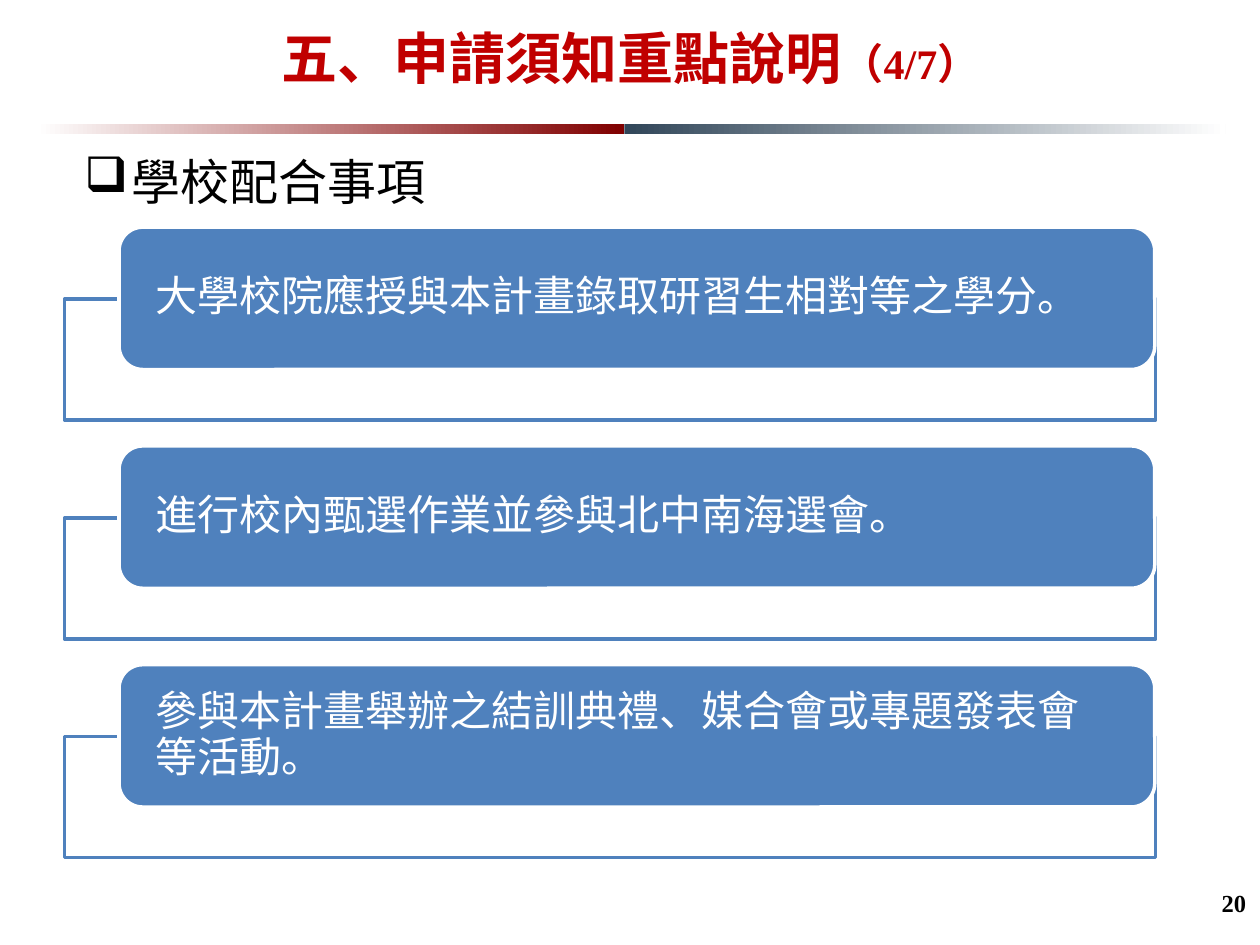
import pptx
import pptx.dml.color
import pptx.enum.shapes
import pptx.enum.text
import pptx.oxml
import pptx.oxml.ns
import pptx.util
from lxml import etree

Cm = pptx.util.Cm
Pt = pptx.util.Pt
RGBColor = pptx.dml.color.RGBColor
SHAPE = pptx.enum.shapes.MSO_SHAPE
ANCHOR = pptx.enum.text.MSO_ANCHOR
ALIGN = pptx.enum.text.PP_ALIGN
qn = pptx.oxml.ns.qn

WHITE = RGBColor(0xFF, 0xFF, 0xFF)
BLACK = RGBColor(0x00, 0x00, 0x00)
RED = RGBColor(0xC0, 0x00, 0x00)
MAROON = RGBColor(0x80, 0x00, 0x00)
SLATE = RGBColor(0x31, 0x46, 0x59)
BLUE = RGBColor(0x4F, 0x81, 0xBD)

SERIF = "Times New Roman"
SANS = "Noto Sans CJK SC"

DUTIES = [
    "大學校院應授與本計畫錄取研習生相對等之學分。",
    "進行校內甄選作業並參與北中南海選會。",
    "參與本計畫舉辦之結訓典禮、媒合會或專題發表會等活動。",
]


def add_run(paragraph, text, size, color, bold=False, latin=SERIF):
    run = paragraph.add_run()
    run.text = text
    run.font.size = Pt(size)
    run.font.bold = bold
    run.font.color.rgb = color
    run.font.name = latin
    east_asian = etree.SubElement(run.font._element, qn("a:ea"))
    east_asian.set("typeface", SANS)


def set_insets(frame, left, top, right, bottom):
    frame.margin_left, frame.margin_top = Cm(left), Cm(top)
    frame.margin_right, frame.margin_bottom = Cm(right), Cm(bottom)


def add_text_area(slide, left, top, width, height):
    area = slide.shapes.add_textbox(Cm(left), Cm(top), Cm(width), Cm(height))
    area.text_frame.word_wrap = True
    return area.text_frame


def add_block(slide, preset, left, top, width, height):
    block = slide.shapes.add_shape(preset, Cm(left), Cm(top), Cm(width), Cm(height))
    block.shadow.inherit = False
    return block


def add_title(slide, left, top, width, height):
    title = add_text_area(slide, left, top, width, height)
    set_insets(title, 0.25, 0.13, 0.25, 0.3)
    title.vertical_anchor = ANCHOR.MIDDLE
    heading = title.paragraphs[0]
    heading.alignment = ALIGN.CENTER
    add_run(heading, "五、申請須知重點說明", 32, RED, True, SANS)
    add_run(heading, "（4/7）", 24, RED, True)


def add_divider(slide, left, top, width, height):
    red_width = width * 0.49 + 0.1
    halves = [
        (left, red_width, WHITE, MAROON),
        (left + red_width, width - red_width, SLATE, WHITE),
    ]
    for half_left, half_width, start, end in halves:
        half = add_block(slide, SHAPE.RECTANGLE, half_left, top, half_width, height)
        half.line.fill.background()
        half.fill.gradient()
        half.fill.gradient_angle = 0
        for stop, color in zip(half.fill.gradient_stops, (start, end)):
            stop.color.rgb = color


def add_section_heading(slide, left, top, width, height):
    section = add_text_area(slide, left, top, width, height)
    set_insets(section, 0.25, 0.13, 0.25, 0.13)
    heading = section.paragraphs[0]
    properties = heading._p.get_or_add_pPr()
    properties.set("marL", str(Cm(0.95)))
    properties.set("indent", str(-Cm(0.95)))
    bullet = etree.SubElement(properties, qn("a:buChar"))
    bullet.set("char", "❑")
    add_run(heading, "學校配合事項", 28, BLACK)


def add_duty(slide, left, top, width, duty):
    bracket = add_block(slide, SHAPE.RECTANGLE, left, top + 1.45, width, 2.44)
    bracket.fill.solid()
    bracket.fill.fore_color.rgb = WHITE
    color = bracket._element.spPr.find(qn("a:solidFill")).find(qn("a:srgbClr"))
    etree.SubElement(color, qn("a:alpha")).set("val", "90000")
    bracket.line.color.rgb = BLUE
    bracket.line.width = Pt(2)

    card = add_block(slide, SHAPE.ROUNDED_RECTANGLE, left + 1.1, top, width - 1.12, 2.87)
    card.fill.solid()
    card.fill.fore_color.rgb = BLUE
    card.line.color.rgb = WHITE
    card.line.width = Pt(2)
    frame = card.text_frame
    frame.word_wrap = True
    frame.vertical_anchor = ANCHOR.MIDDLE
    set_insets(frame, 0.6, 0, 0.6, 0)
    statement = frame.paragraphs[0]
    statement.alignment = ALIGN.LEFT
    statement.line_spacing = 0.9
    add_run(statement, duty, 24, WHITE)


def add_duties(slide, left, top, width, pitch):
    for index, duty in enumerate(DUTIES):
        add_duty(slide, left, top + index * pitch, width, duty)


def add_page_number(slide, left, top, width, height):
    footer = add_text_area(slide, left, top, width, height)
    number = footer.paragraphs[0]
    number.alignment = ALIGN.RIGHT
    add_run(number, "20", 14, BLACK, True)


def main():
    presentation = pptx.Presentation()
    presentation.slide_width = Cm(25.4)
    presentation.slide_height = Cm(19.05)
    slide = presentation.slides.add_slide(presentation.slide_layouts[6])
    add_divider(slide, 0.74, 2.51, 23.97, 0.2)
    add_page_number(slide, 20.09, 17.78, 5.28, 1.04)
    add_section_heading(slide, 1.45, 2.92, 23.95, 1.4)
    add_duties(slide, 1.3, 4.58, 22, 4.41)
    add_title(slide, 1.3, 0.33, 22.81, 1.8)
    presentation.save("out.pptx")


if __name__ == "__main__":
    main()
